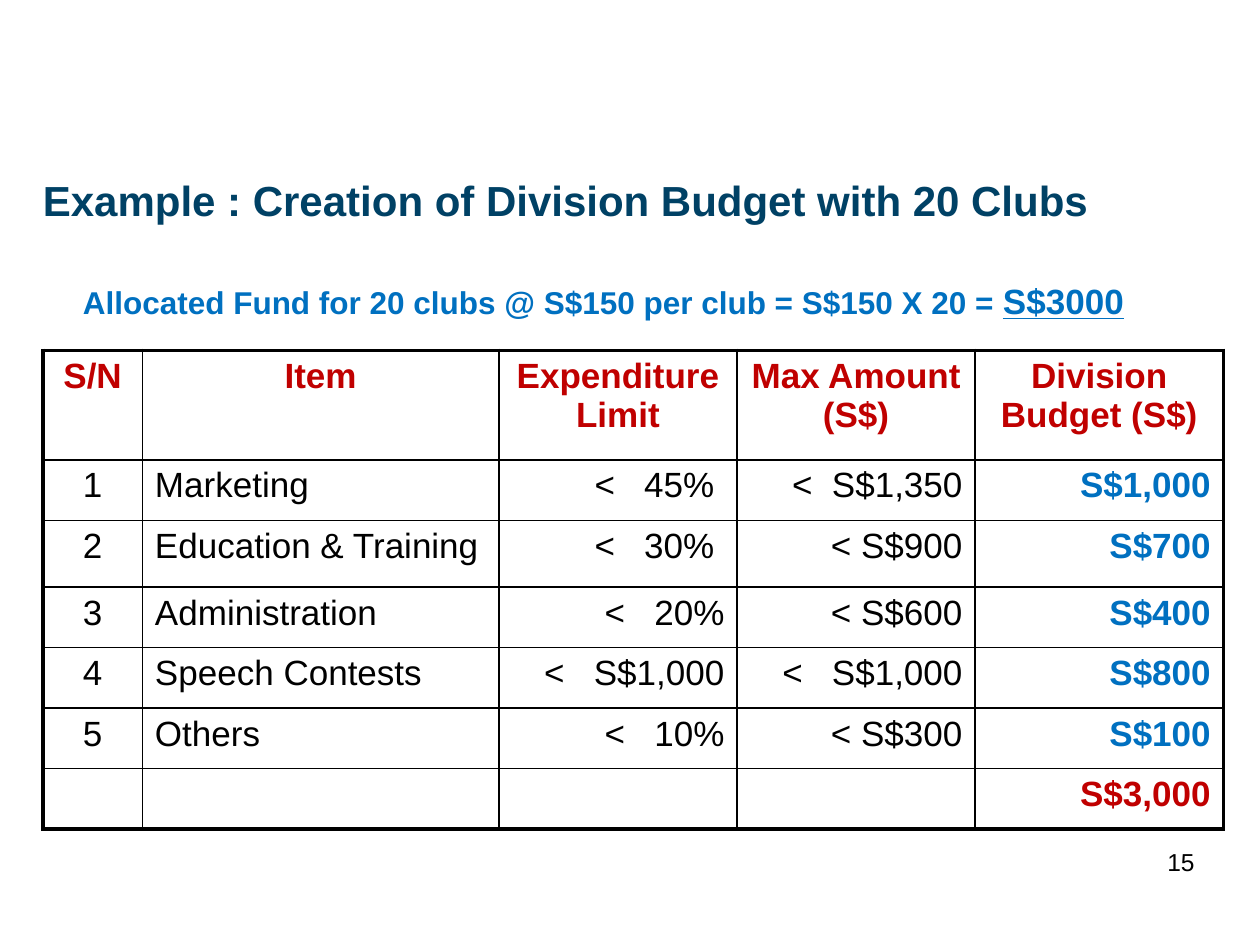
from lxml.etree import SubElement
from pptx import Presentation
from pptx.dml.color import RGBColor
from pptx.enum.text import MSO_ANCHOR, PP_ALIGN
from pptx.oxml.ns import qn
from pptx.util import Inches, Pt

NAVY = RGBColor(0x00, 0x41, 0x65)
BLUE = RGBColor(0x00, 0x70, 0xC0)
RED = RGBColor(0xC0, 0x00, 0x00)
BLACK = RGBColor(0x00, 0x00, 0x00)

COLUMN_WIDTHS = [0.79, 2.83, 1.89, 1.89, 1.97]
ROW_HEIGHTS = [0.87, 0.48, 0.53, 0.48, 0.48, 0.48, 0.48]
COLUMN_ALIGNMENTS = [PP_ALIGN.CENTER, PP_ALIGN.LEFT] + [PP_ALIGN.RIGHT] * 3
EXPENDITURE_COLUMN = 2
BUDGET_COLUMN = 4
INDENTED_ROWS = (1, 2)
SPACE_WIDTH = 5.56

BUDGET_ROWS = [
    ["S/N", "Item", "Expenditure Limit", "Max Amount (S$)", "Division Budget (S$)"],
    ["1", "Marketing", ("<", 3, "45%"), ("<", 2, "S$1,350"), "S$1,000"],
    ["2", "Education & Training", ("<", 3, "30%"), "< S$900", "S$700"],
    ["3", "Administration", ("<", 3, "20%"), "< S$600", "S$400"],
    ["4", "Speech Contests", ("<", 3, "S$1,000"), ("<", 3, "S$1,000"), "S$800"],
    ["5", "Others", ("<", 3, "10%"), "< S$300", "S$100"],
    ["", "", "", "", "S$3,000"],
]


class BudgetSlide:
    font_name = "Arial"
    table_size = 20
    outer_width = 2.25
    inner_width = 1

    def __init__(self, presentation):
        self.slide = presentation.slides.add_slide(presentation.slide_layouts[5])

    def style(self, paragraph, size, color, bold=False, alignment=PP_ALIGN.LEFT):
        paragraph.alignment = alignment
        font = paragraph.font
        font.name = self.font_name
        font.size = Pt(size)
        font.bold = bold
        font.color.rgb = color

    def title(self, text, left, top, width, height):
        shape = self.slide.shapes.title
        shape.left, shape.top = Inches(left), Inches(top)
        shape.width, shape.height = Inches(width), Inches(height)
        shape.text_frame.text = text
        shape.text_frame.vertical_anchor = MSO_ANCHOR.MIDDLE
        self.style(shape.text_frame.paragraphs[0], 24, NAVY, bold=True)

    def text(self, text, left, top, width, height, size, color, **options):
        shape = self.slide.shapes.add_textbox(
            Inches(left), Inches(top), Inches(width), Inches(height))
        shape.text_frame.word_wrap = True
        paragraph = shape.text_frame.paragraphs[0]
        paragraph.add_run().text = text
        self.style(paragraph, size, color, **options)
        return paragraph

    def border(self, cell, side, width):
        properties = cell._tc.get_or_add_tcPr()
        line = SubElement(properties, qn(f"a:{side}"), w=str(Pt(width)))
        fill = SubElement(line, qn("a:solidFill"))
        SubElement(fill, qn("a:srgbClr"), val=str(BLACK))

    def cell_text(self, paragraph, content):
        if isinstance(content, str):
            paragraph.add_run().text = content
            return
        sign, spaces, limit = content
        paragraph.add_run().text = sign
        gap = paragraph.add_run()
        gap.text = " "
        extra_spacing = round((spaces - 1) * SPACE_WIDTH * 100)
        gap._r.get_or_add_rPr().set("spc", str(extra_spacing))
        paragraph.add_run().text = limit

    def table(self, rows, left, top):
        last_row, last_column = len(rows) - 1, len(rows[0]) - 1
        frame = self.slide.shapes.add_table(
            len(rows), len(rows[0]), Inches(left), Inches(top),
            Inches(sum(COLUMN_WIDTHS)), Inches(sum(ROW_HEIGHTS)))
        table = frame.table
        table.horz_banding = False
        table.first_row = False
        for column, width in zip(table.columns, COLUMN_WIDTHS):
            column.width = Inches(width)
        for row, height in zip(table.rows, ROW_HEIGHTS):
            row.height = Inches(height)
        for row_index, row in enumerate(rows):
            for column_index, content in enumerate(row):
                cell = table.cell(row_index, column_index)
                edges = {"lnL": column_index == 0, "lnR": column_index == last_column,
                         "lnT": row_index == 0, "lnB": row_index == last_row}
                for side, is_outer in edges.items():
                    self.border(cell, side, self.outer_width if is_outer else self.inner_width)
                cell.fill.background()
                if column_index == EXPENDITURE_COLUMN and row_index in INDENTED_ROWS:
                    cell.margin_right = Inches(0.18)
                is_header = row_index == 0
                is_budget = column_index == BUDGET_COLUMN
                color = BLUE if is_budget else BLACK
                if is_header or (is_budget and row_index == last_row):
                    color = RED
                alignment = PP_ALIGN.CENTER if is_header else COLUMN_ALIGNMENTS[column_index]
                paragraph = cell.text_frame.paragraphs[0]
                if content:
                    self.cell_text(paragraph, content)
                self.style(paragraph, self.table_size, color, is_header or is_budget, alignment)


def main():
    presentation = Presentation()
    presentation.slide_width = Inches(10)
    presentation.slide_height = Inches(7.5)
    budget = BudgetSlide(presentation)
    budget.title("Example : Creation of Division Budget with 20 Clubs", 0.24, 0.96, 9, 1.25)
    budget.table(BUDGET_ROWS, 0.34, 2.78)
    allocation = budget.text("Allocated Fund for 20 clubs @ S$150 per club = S$150 X 20 = ",
                             0.56, 2.17, 8.98, 0.44, 18, BLUE, bold=True)
    total = allocation.add_run()
    total.text = "S$3000"
    total.font.size = Pt(20)
    total.font.underline = True
    budget.text("15", 7.25, 6.67, 2.33, 0.52, 14, BLACK, alignment=PP_ALIGN.RIGHT)
    presentation.save("out.pptx")


if __name__ == "__main__":
    main()
